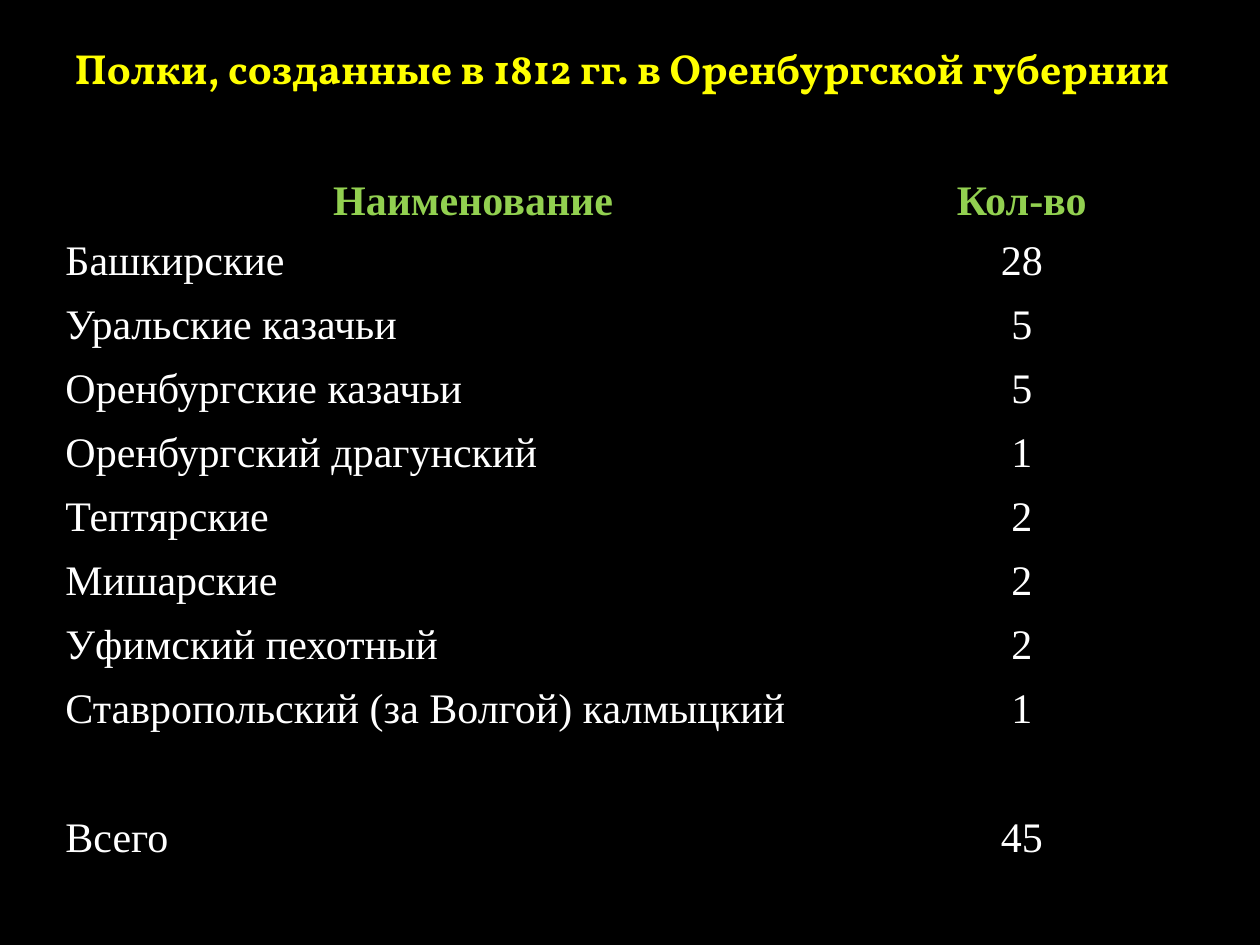
from lxml import etree
from pptx import Presentation
from pptx.dml.color import RGBColor
from pptx.enum import text
from pptx.oxml import ns
from pptx.util import Inches, Pt

COLORS = {
    "background": "000000",
    "title": "FFFF00",
    "header": "92D050",
    "body": "FFFFFF",
    "border": "000000",
}
TITLE = "Полки, созданные в 1812 гг. в Оренбургской губернии"
HEADINGS = ("Наименование", "Кол-во")
REGIMENTS = (
    ("Башкирские", "28"),
    ("Уральские казачьи", "5"),
    ("Оренбургские казачьи", "5"),
    ("Оренбургский драгунский", "1"),
    ("Тептярские", "2"),
    ("Мишарские", "2"),
    ("Уфимский пехотный", "2"),
    ("Ставропольский (за Волгой) калмыцкий", "1"),
)
TOTAL = ("Всего", "45")

TITLE_FONT = {"name": "Vollkorn", "size": Pt(24), "bold": True}
HEADER_FONT = {"name": "Times New Roman", "size": Pt(24), "bold": True}
BODY_FONT = {**HEADER_FONT, "bold": False}
TITLE_FRAME = {
    "word_wrap": False,
    "auto_size": text.MSO_AUTO_SIZE.NONE,
    "vertical_anchor": text.MSO_ANCHOR.TOP,
}
CELL_MARGINS = {f"margin_{side}": Inches(0.01) for side in ("left", "right", "top", "bottom")}
COLUMN_WIDTHS = (6.49, 2.22, 0.34)
ROW_HEIGHTS = (0.48, 0.48, 4.58, 0.45)


def apply(target, values):
    for name, value in values.items():
        setattr(target, name, value)


def write_paragraph(paragraph, content, font, color, alignment):
    paragraph.alignment = alignment
    run = paragraph.add_run()
    run.text = content
    apply(run.font, font)
    run.font.color.rgb = RGBColor.from_string(COLORS[color])


def add_title(slide, left, top, width, height):
    title = slide.shapes.title
    box = {"left": left, "top": top, "width": width, "height": height}
    apply(title, {name: Inches(value) for name, value in box.items()})
    apply(title.text_frame, TITLE_FRAME)
    write_paragraph(title.text_frame.paragraphs[0], TITLE, TITLE_FONT,
                    "title", text.PP_ALIGN.CENTER)
    # Keep the title in front of the table
    slide.shapes._spTree.append(title._element)


def format_cell(cell):
    cell.fill.background()
    properties = cell._tc.get_or_add_tcPr()
    for index, side in enumerate(("lnL", "lnR", "lnT", "lnB")):
        line = etree.Element(ns.qn(f"a:{side}"), w=str(Pt(1)))
        fill = etree.SubElement(line, ns.qn("a:solidFill"))
        etree.SubElement(fill, ns.qn("a:srgbClr"), val=COLORS["border"])
        properties.insert(index, line)


def write_cell(cell, lines, font, color, alignment):
    apply(cell, CELL_MARGINS)
    frame = cell.text_frame
    for index, content in enumerate(lines):
        paragraph = frame.add_paragraph() if index else frame.paragraphs[0]
        paragraph.space_after = Pt(10)
        write_paragraph(paragraph, content, font, color, alignment)


def add_regiment_table(slide, left, top, width, height):
    table = slide.shapes.add_table(
        len(ROW_HEIGHTS), len(COLUMN_WIDTHS),
        Inches(left), Inches(top), Inches(width), Inches(height)).table
    table.first_row = table.horz_banding = False
    for column, size in zip(table.columns, COLUMN_WIDTHS):
        column.width = Inches(size)
    for row, size in zip(table.rows, ROW_HEIGHTS):
        row.height = Inches(size)
    for cell in table.iter_cells():
        format_cell(cell)

    # Headings, regiments and total; the top row and last column stay empty
    names_and_counts = zip(*REGIMENTS)
    alignments = (text.PP_ALIGN.LEFT, text.PP_ALIGN.CENTER)
    for column, (lines, alignment) in enumerate(zip(names_and_counts, alignments)):
        write_cell(table.cell(1, column), [HEADINGS[column]], HEADER_FONT,
                   "header", text.PP_ALIGN.CENTER)
        write_cell(table.cell(2, column), lines, BODY_FONT, "body", alignment)
        write_cell(table.cell(3, column), [TOTAL[column]], BODY_FONT, "body", alignment)


def main():
    presentation = Presentation()
    presentation.slide_width = Inches(10)
    presentation.slide_height = Inches(7.5)
    slide = presentation.slides.add_slide(presentation.slide_layouts.get_by_name("Title Only"))
    background = slide.background.fill
    background.solid()
    background.fore_color.rgb = RGBColor.from_string(COLORS["background"])
    add_regiment_table(slide, 0.51, 0.92, sum(COLUMN_WIDTHS), sum(ROW_HEIGHTS))
    add_title(slide, 0.4, 0.29, 9.07, 0.91)
    presentation.save("out.pptx")


if __name__ == "__main__":
    main()
